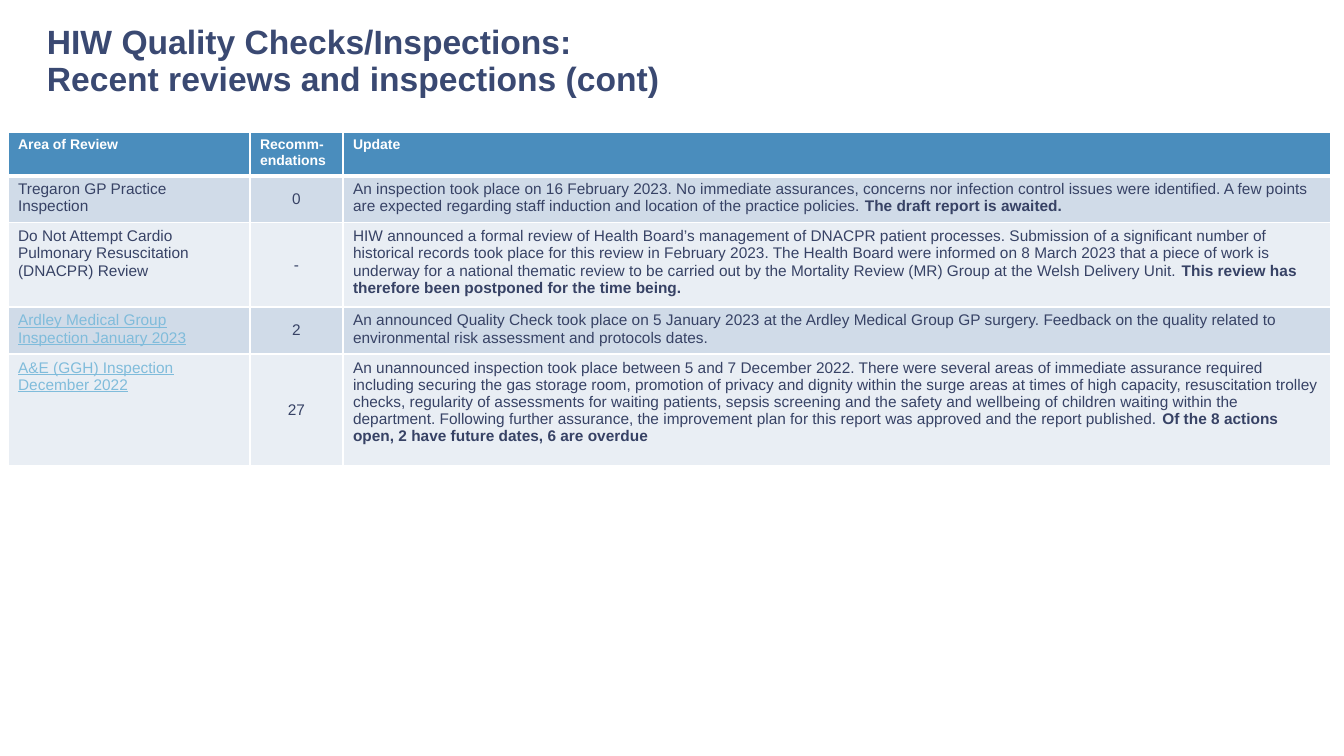
from lxml import etree
from pptx import Presentation
from pptx import util as u
from pptx.dml.color import RGBColor
from pptx.enum import text
from pptx.oxml.ns import qn

THEME = {
    "font": "Arial",
    "title": RGBColor.from_string("3A4972"),
    "body": RGBColor.from_string("374265"),
    "link": RGBColor.from_string("80BCDB"),
    "white": RGBColor.from_string("FFFFFF"),
    "header": RGBColor.from_string("4A8DBD"),
    "bands": [RGBColor.from_string("D0DBE8"), RGBColor.from_string("E9EEF4")],
    "title_size": 24,
    "header_size": 10,
    "body_size": 11,
}

HEADINGS = ["Area of Review", "Recomm-endations", "Update"]
REVIEWS = [
    ("Tregaron GP Practice Inspection", False, "0",
     "An inspection took place on 16 February 2023. No immediate assurances, concerns nor "
     "infection control issues were identified. A few points are expected regarding staff "
     "induction and location of the practice policies. ",
     "The draft report is awaited."),
    ("Do Not Attempt Cardio Pulmonary Resuscitation (DNACPR) Review", False, "-",
     "HIW announced a formal review of Health Board’s management of DNACPR patient processes. "
     "Submission of a significant number of historical records took place for this review in "
     "February 2023. The Health Board were informed on 8 March 2023 that a piece of work is "
     "underway for a national thematic review to be carried out by the Mortality Review (MR) "
     "Group at the Welsh Delivery Unit. ",
     "This review has therefore been postponed for the time being."),
    ("Ardley Medical Group Inspection January 2023", True, "2",
     "An announced Quality Check took place on 5 January 2023 at the Ardley Medical Group GP "
     "surgery. Feedback on the quality related to environmental risk assessment and protocols "
     "dates.", ""),
    ("A&E (GGH) Inspection December 2022", True, "27",
     "An unannounced inspection took place between 5 and 7 December 2022. There were several "
     "areas of immediate assurance required including securing the gas storage room, promotion "
     "of privacy and dignity within the surge areas at times of high capacity, resuscitation "
     "trolley checks, regularity of assessments for waiting patients, sepsis screening and the "
     "safety and wellbeing of children waiting within the department. Following further "
     "assurance, the improvement plan for this report was approved and the report published. ",
     "Of the 8 actions open, 2 have future dates, 6 are overdue"),
]
COLUMN_WIDTHS = [242, 93, 988]
ROW_HEIGHTS = [43, 45, 79, 45, 112]


def px(n):
    return u.Emu(round(n * 914400 / 100.8))


def style(r, size, color, bold=False):
    r.font.name = THEME["font"]
    r.font.size = u.Pt(size)
    r.font.color.rgb = color
    r.font.bold = bold


prs = Presentation()
prs.slide_width, prs.slide_height = px(1344), px(756)
s = prs.slides.add_slide(prs.slide_layouts[6])

title = s.shapes.add_textbox(px(37), px(18), px(1159), px(88))
tf = title.text_frame
tf.word_wrap = True
tf.vertical_anchor = text.MSO_ANCHOR.MIDDLE
p = tf.paragraphs[0]
p.text = "HIW Quality Checks/Inspections:\nRecent reviews and inspections (cont)"
p.line_spacing = 0.9
for r in p.runs:
    style(r, THEME["title_size"], THEME["title"], True)

table = s.shapes.add_table(len(ROW_HEIGHTS), len(COLUMN_WIDTHS), px(8), px(132),
                           px(sum(COLUMN_WIDTHS)), px(sum(ROW_HEIGHTS))).table
table.horz_banding = False
for column, width in zip(table.columns, COLUMN_WIDTHS):
    column.width = px(width)
for row, height in zip(table.rows, ROW_HEIGHTS):
    row.height = px(height)

for i, row in enumerate(table.rows):
    for cell in row.cells:
        tcPr = cell._tc.get_or_add_tcPr()
        for side in ("lnL", "lnR", "lnT", "lnB"):
            thick = (i, side) in ((0, "lnB"), (1, "lnT"))
            ln = etree.SubElement(tcPr, qn("a:" + side), w=str(u.Pt(3 if thick else 1)))
            line_fill = etree.SubElement(ln, qn("a:solidFill"))
            etree.SubElement(line_fill, qn("a:srgbClr"), val=str(THEME["white"]))
        cell.fill.solid()
        cell.fill.fore_color.rgb = THEME["bands"][(i - 1) % 2] if i else THEME["header"]

for cell, heading in zip(table.rows[0].cells, HEADINGS):
    cell.text_frame.text = heading
    style(cell.text_frame.paragraphs[0].runs[0], THEME["header_size"], THEME["white"], True)

for i, (area, linked, count, update, status) in enumerate(REVIEWS, 1):
    for j, content in enumerate((area, count, update)):
        cell = table.cell(i, j)
        p = cell.text_frame.paragraphs[0]
        p.text = content
        r = p.runs[0]
        style(r, THEME["body_size"], THEME["body"])
        if j == 0 and linked:
            r.font.color.rgb = THEME["link"]
            r.font.underline = True
        if j == 1:
            cell.vertical_anchor = text.MSO_ANCHOR.MIDDLE
            p.alignment = text.PP_ALIGN.CENTER
        if j == 2 and status:
            r = p.add_run()
            r.text = status
            style(r, THEME["body_size"], THEME["body"], True)

prs.save("out.pptx")
